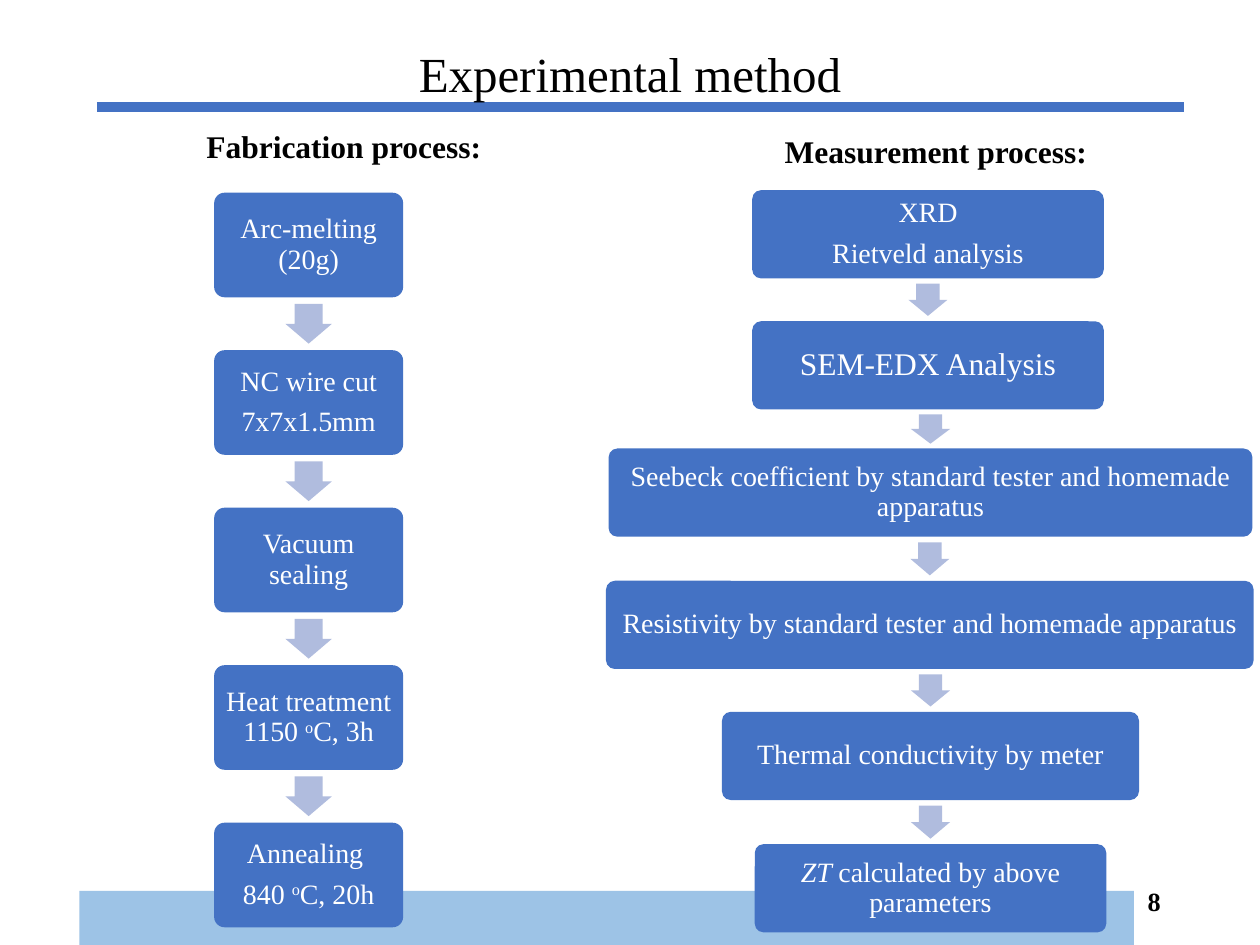
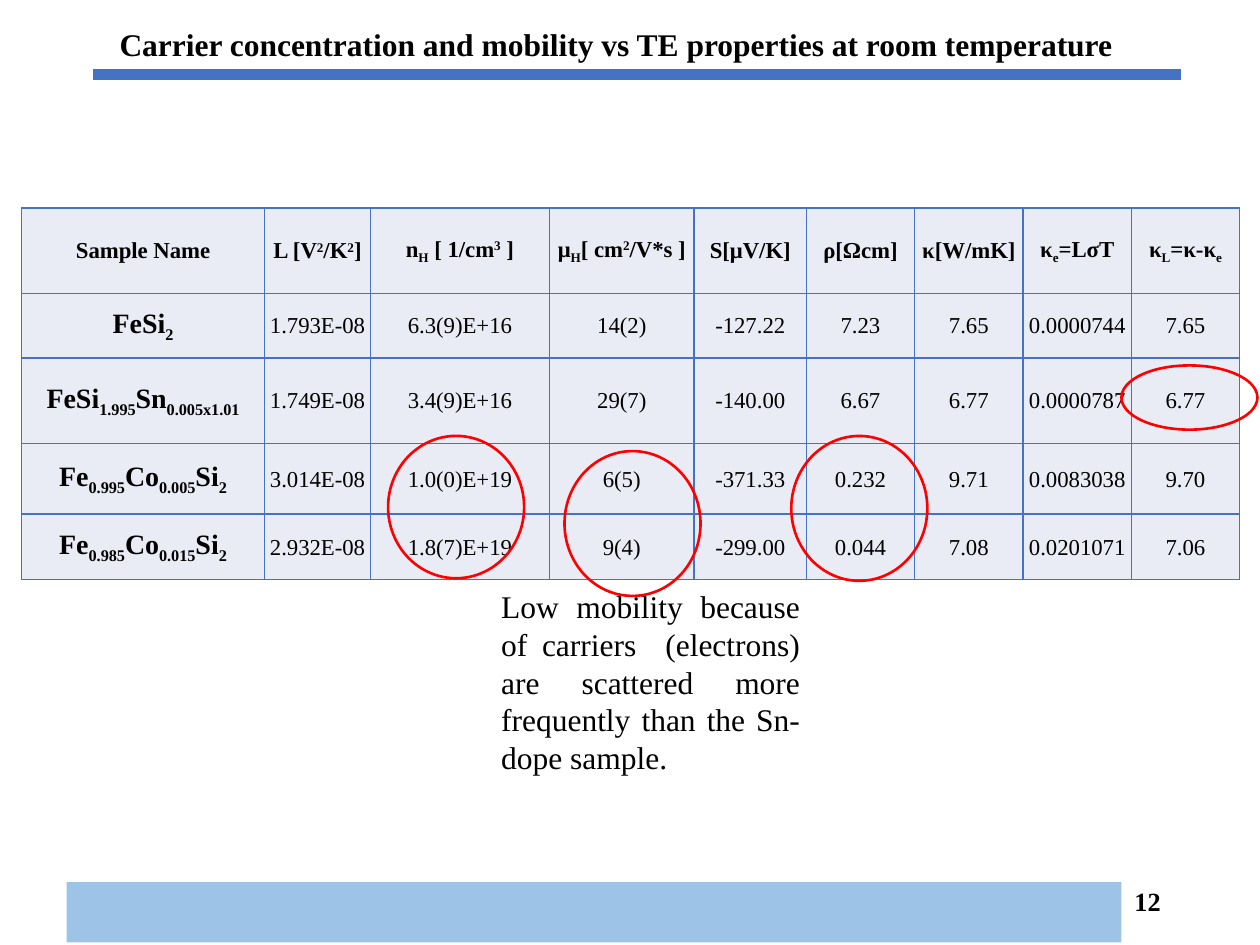
"""Build two slides on the experimental method and the carrier properties."""
from lxml import etree
from pptx import Presentation
from pptx.dml.color import RGBColor
from pptx.enum.shapes import MSO_CONNECTOR, MSO_SHAPE
from pptx.enum.text import MSO_ANCHOR, PP_ALIGN
from pptx.oxml.ns import qn
from pptx.util import Inches, Pt

LEFT, CENTER, RIGHT, JUSTIFY = PP_ALIGN.LEFT, PP_ALIGN.CENTER, PP_ALIGN.RIGHT, PP_ALIGN.JUSTIFY
TOP, MIDDLE = MSO_ANCHOR.TOP, MSO_ANCHOR.MIDDLE
RECT, ROUNDED, ELLIPSE = MSO_SHAPE.RECTANGLE, MSO_SHAPE.ROUNDED_RECTANGLE, MSO_SHAPE.OVAL
DOWN_ARROW = MSO_SHAPE.DOWN_ARROW
STRAIGHT = MSO_CONNECTOR.STRAIGHT

FONT = "Times New Roman"
BLUE, BAND, ARROW, CELL = "4472C4", "9DC3E6", "B0BCDE", "E9EBF5"
RED, BLACK, WHITE = "FF0000", "000000", "FFFFFF"
BASELINES = {"^": "30000", "_": "-25000"}


def write(tf, lines, size, color=BLACK, bold=False, align=LEFT, spacing=None, after=None):
    """Write lines whose runs are split by |, marked ^ (super), _ (sub) or ~ (italic)."""
    tf.word_wrap = True
    for i, line in enumerate(lines):
        p = tf.paragraphs[0] if i == 0 else tf.add_paragraph()
        p.alignment = align
        p.line_spacing = spacing
        p.space_after = after
        for part in line.split("|"):
            r = p.add_run()
            r.text = part.lstrip("^_~")
            r.font.name = FONT
            r.font.size = Pt(size)
            r.font.bold = bold
            r.font.italic = part.startswith("~")
            r.font.color.rgb = RGBColor.from_string(color)
            if part[0] in BASELINES:
                r._r.get_or_add_rPr().set("baseline", BASELINES[part[0]])


def add_shape(s, kind, box, fill=None, line=None):
    """Add a preset shape without shadow."""
    sp = s.shapes.add_shape(kind, *[Inches(v) for v in box])
    sp.shadow.inherit = False
    if fill:
        sp.fill.solid()
        sp.fill.fore_color.rgb = RGBColor.from_string(fill)
    else:
        sp.fill.background()
    if line:
        sp.line.color.rgb = RGBColor.from_string(line)
        sp.line.width = Pt(1.5)
    else:
        sp.line.fill.background()
    return sp


prs = Presentation()
prs.slide_width, prs.slide_height = Inches(10), Inches(7.5)

frames = [
    ((0.77, 0.85), (0.63, 7.07), "8"),
    ((0.74, 0.59), (0.53, 7), "12"),
]
texts = [
    [
        ((0.69, 0.18, 8.62, 0.85), "Experimental method", 28, False, CENTER, MIDDLE, 0.9),
        ((6.13, 1, 2.86, 0.4), "Measurement process:", 18, True, LEFT, TOP, None),
        ((1.54, 0.96, 2.47, 0.4), "Fabrication process:", 18, True, LEFT, TOP, None),
    ],
    [
        ((0.85, 0.15, 8.62, 0.4),
         "Carrier concentration and mobility vs TE properties at room temperature",
         18, True, LEFT, TOP, None),
        ((3.88, 4.61, 2.57, 1.92),
         "Low mobility because of carriers  (electrons) are scattered more "
         "frequently than the Sn-dope sample.", 18, False, JUSTIFY, TOP, None),
    ],
]
slides = []
for (rule_x, rule_y), (band_x, band_y), number in frames:
    s = prs.slides.add_slide(prs.slide_layouts[6])
    rule = s.shapes.add_connector(STRAIGHT, Inches(rule_x), Inches(rule_y),
                                  Inches(rule_x + 8.63), Inches(rule_y))
    rule.line.color.rgb = RGBColor.from_string(BLUE)
    rule.line.width = Pt(6)
    etree.SubElement(rule._element.spPr, qn("a:effectLst"))
    add_shape(s, RECT, (band_x, band_y, 8.37, 0.48), BAND)
    page_text = ((7.06, 6.95, 2.25, 0.4), number, 15, True, RIGHT, MIDDLE, None)
    for box, text, size, bold, align, anchor, spacing in [page_text] + texts[len(slides)]:
        tf = s.shapes.add_textbox(*[Inches(v) for v in box]).text_frame
        tf.vertical_anchor = anchor
        write(tf, [text], size, bold=bold, align=align, spacing=spacing)
    slides.append(s)

method, carriers = slides

fabrication_steps = [
    ["Arc-melting (20g)"],
    ["NC wire cut", "7x7x1.5mm"],
    ["Vacuum sealing"],
    ["Heat treatment 1150 |^o|C, 3h"],
    ["Annealing ", "840 |^o|C, 20h"],
]
fabrication = [(1.7, 1.53 + 1.25 * i, 1.5, 16, lines) for i, lines in enumerate(fabrication_steps)]
measurement = [
    (5.97, 1.51, 2.79, 16, ["XRD", "Rietveld analysis"]),
    (5.97, 2.55, 2.79, 18, ["SEM-EDX Analysis"]),
    (4.83, 3.56, 5.11, 16, ["Seebeck coefficient by standard tester and homemade apparatus"]),
    (4.81, 4.61, 5.14, 16, ["Resistivity by standard tester and homemade apparatus"]),
    (5.73, 5.65, 3.31, 16, ["Thermal conductivity by meter"]),
    (5.99, 6.7, 2.79, 16, ["~ZT |calculated by above parameters"]),
]
for steps, height, arrow_w in [(measurement, 0.7, 0.31), (fabrication, 0.83, 0.37)]:
    bottom = None
    for left, top, width, size, lines in steps:
        if bottom is not None:
            gap = top - bottom
            arrow_x = left + width / 2 - arrow_w / 2
            sp = add_shape(method, DOWN_ARROW,
                           (arrow_x, bottom + gap / 8, arrow_w, gap * 0.75), ARROW)
            sp.adjustments[0] = 0.6
            sp.adjustments[1] = 0.5
        sp = add_shape(method, ROUNDED, (left, top, width, height), BLUE)
        sp.adjustments[0] = 0.1
        tf = sp.text_frame
        tf.margin_left = tf.margin_right = tf.margin_top = tf.margin_bottom = Inches(0.07)
        tf.vertical_anchor = MIDDLE
        write(tf, lines, size, WHITE, align=CENTER, spacing=0.9, after=Pt(6))
        bottom = top + height

rows = [
    ["Sample Name", "L [V|^2|/K|^2|]", "n|_H| [ 1/cm|^3| ]", "μ|_H|[ cm|^2|/V*s ]",
     "S[μV/K]", "ρ[Ωcm]", "κ[W/mK]", "κ|_e|=LσT", "κ|_L|=κ-κ|_e"],
    ["FeSi|_2", "1.793E-08", "6.3(9)E+16", "14(2)",
     "-127.22", "7.23", "7.65", "0.0000744", "7.65"],
    ["FeSi|_1.995|Sn|_0.005x1.01", "1.749E-08", "3.4(9)E+16", "29(7)",
     "-140.00", "6.67", "6.77", "0.0000787", "6.77"],
    ["Fe|_0.995|Co|_0.005|Si|_2", "3.014E-08", "1.0(0)E+19", "6(5)",
     "-371.33", "0.232", "9.71", "0.0083038", "9.70"],
    ["Fe|_0.985|Co|_0.015|Si|_2", "2.932E-08", "1.8(7)E+19", "9(4)",
     "-299.00", "0.044", "7.08", "0.0201071", "7.06"],
]
col_widths = [1.93, 0.84, 1.42, 1.15, 0.89] + [0.86] * 4
row_heights = [0.68, 0.51, 0.68, 0.56, 0.52]
table = carriers.shapes.add_table(len(rows), len(col_widths), Inches(0.17), Inches(1.65),
                                  Inches(9.67), Inches(2.95)).table
table.first_row = table.horz_banding = False
for col, width in zip(table.columns, col_widths):
    col.width = Inches(width)
for row, height in zip(table.rows, row_heights):
    row.height = Inches(height)
for i, values in enumerate(rows):
    for j, value in enumerate(values):
        cell = table.cell(i, j)
        cell.margin_left = cell.margin_right = cell.margin_top = Inches(0.01)
        cell.margin_bottom = 0
        cell.vertical_anchor = MIDDLE
        tcPr = cell._tc.get_or_add_tcPr()
        for side in ("a:lnL", "a:lnR", "a:lnT", "a:lnB"):
            ln = etree.SubElement(tcPr, qn(side), w="12700")
            fill = etree.SubElement(ln, qn("a:solidFill"))
            etree.SubElement(fill, qn("a:srgbClr"), val=BLUE)
        cell.fill.solid()
        cell.fill.fore_color.rgb = RGBColor.from_string(CELL)
        size = 16 if i > 0 and j == 0 else 13
        write(cell.text_frame, [value], size, bold=i == 0 or j == 0, align=CENTER)

highlights = [
    (8.9, 2.9, 1.08, 0.51),
    (3.08, 3.46, 1.08, 1.13),
    (6.28, 3.46, 1.08, 1.15),
    (4.48, 3.58, 1.08, 1.15),
]
for box in highlights:
    add_shape(carriers, ELLIPSE, box, line=RED)

prs.save("out.pptx")
